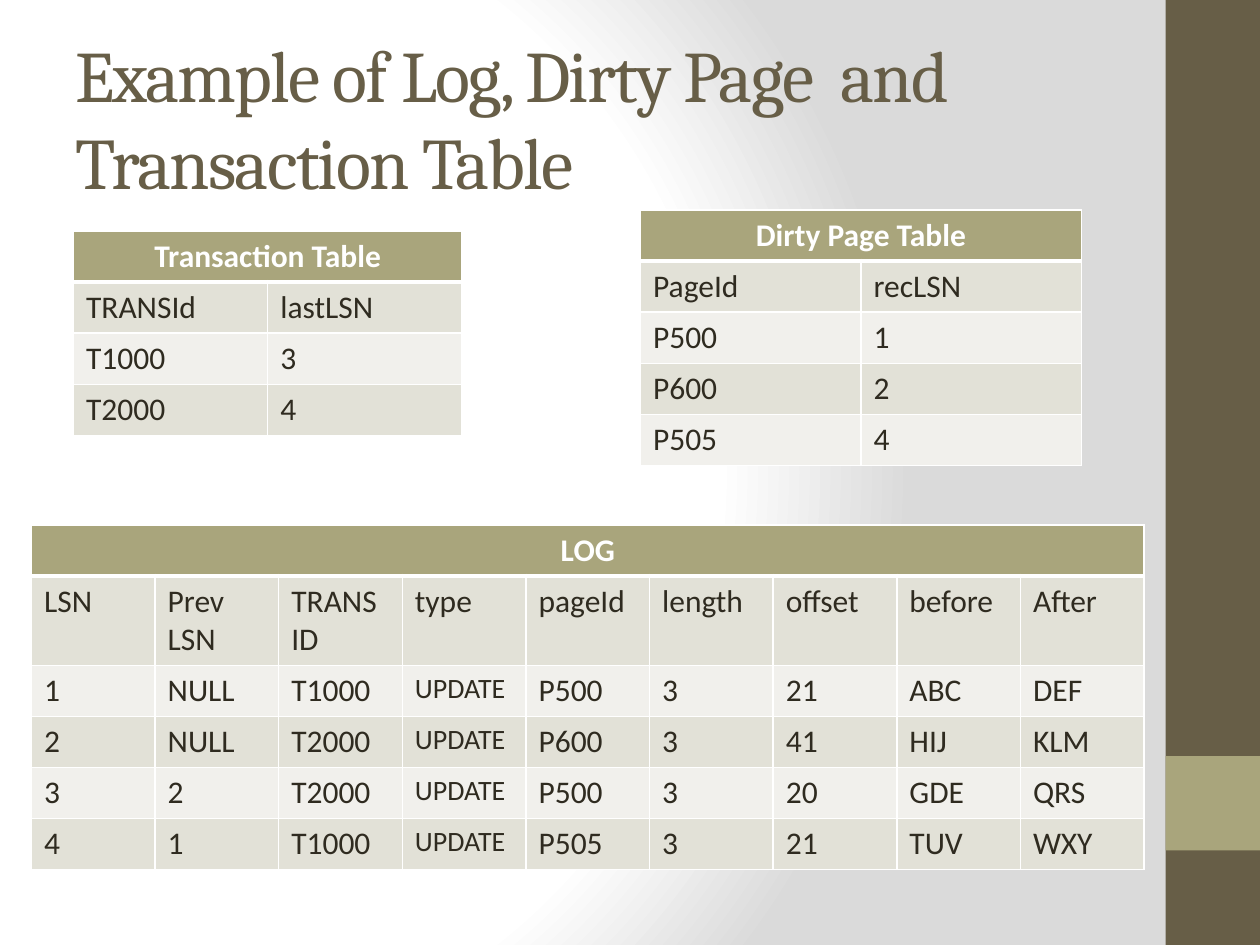
from lxml import etree
from pptx import Presentation
from pptx.dml.color import RGBColor
from pptx.enum.shapes import MSO_SHAPE
from pptx.enum.text import MSO_ANCHOR, PP_ALIGN
from pptx.oxml import parse_xml
from pptx.oxml.ns import nsdecls, qn
from pptx.util import Pt

RECTANGLE = MSO_SHAPE.RECTANGLE
MIDDLE = MSO_ANCHOR.MIDDLE
CENTER = PP_ALIGN.CENTER

COLORS = {
    "brown": "675E47",
    "olive": "A9A57C",
    "text": "2F2B20",
    "white": "FFFFFF",
    "dark_band": "E2E1D7",
    "light_band": "F1F0EC",
    "gray": "DADADA",
}
ROW_HEIGHT = 29.2
TALL_ROW_HEIGHT = 51
SMALL_TEXT = "UPDATE"

TRANSACTION_ROWS = [["TRANSId", "lastLSN"], ["T1000", "3"], ["T2000", "4"]]
DIRTY_PAGE_ROWS = [["PageId", "recLSN"], ["P500", "1"], ["P600", "2"], ["P505", "4"]]
LOG_ROWS = [
    ["LSN", "Prev\nLSN", "TRANS\nID", "type", "pageId", "length", "offset", "before", "After"],
    ["1", "NULL", "T1000", "UPDATE", "P500", "3", "21", "ABC", "DEF"],
    ["2", "NULL", "T2000", "UPDATE", "P600", "3", "41", "HIJ", "KLM"],
    ["3", "2", "T2000", "UPDATE", "P500", "3", "20", "GDE", "QRS"],
    ["4", "1", "T1000", "UPDATE", "P505", "3", "21", "TUV", "WXY"],
]


def color(name):
    return RGBColor.from_string(COLORS[name])


def add_run(paragraph, text, font_name, size, color_name, bold=False):
    run = paragraph.add_run()
    run.text = text
    run.font.name = font_name
    run.font.size = Pt(size)
    run.font.bold = bold
    run.font.color.rgb = color(color_name)
    return run


def set_background(slide):
    slide.background.fill.gradient()
    old_gradient = next(slide.background._cSld.iter(qn("a:gradFill")))
    stops = "".join(
        f'<a:gs pos="{position * 1000}"><a:srgbClr val="{COLORS[name]}"/></a:gs>'
        for position, name in [(0, "white"), (75, "white"), (100, "gray")]
    )
    gradient = parse_xml(
        f'<a:gradFill {nsdecls("a")} rotWithShape="1"><a:gsLst>{stops}</a:gsLst>'
        '<a:path path="circle">'
        '<a:fillToRect l="20000" t="50000" r="100000" b="50000"/>'
        "</a:path></a:gradFill>"
    )
    old_gradient.getparent().replace(old_gradient, gradient)


def add_block(slide, left, top, width, height, color_name):
    shape = slide.shapes.add_shape(RECTANGLE, Pt(left), Pt(top), Pt(width), Pt(height))
    shape.shadow.inherit = False
    shape.fill.solid()
    shape.fill.fore_color.rgb = color(color_name)
    shape.line.fill.background()


def add_sidebar(slide, left, top, width, height):
    add_block(slide, left, top, width, height, "brown")
    add_block(slide, left, top + height * 0.8, width, width, "olive")


def add_title(slide, left, top, width, height, text):
    text_box = slide.shapes.add_textbox(Pt(left), Pt(top), Pt(width), Pt(height))
    text_frame = text_box.text_frame
    text_frame.word_wrap = True
    text_frame.vertical_anchor = MIDDLE
    run = add_run(text_frame.paragraphs[0], text, "Cambria", 41.4, "brown")
    run.font._element.set("spc", "-100")


def set_borders(cell, row_index):
    properties = cell._tc.get_or_add_tcPr()
    widths = {
        "lnL": 1,
        "lnR": 1,
        "lnT": 3 if row_index == 1 else 1,
        "lnB": 3 if row_index == 0 else 1,
    }
    for tag, width in widths.items():
        line = etree.SubElement(properties, qn(f"a:{tag}"), w=str(Pt(width)))
        fill = etree.SubElement(line, qn("a:solidFill"))
        etree.SubElement(fill, qn("a:srgbClr"), val=COLORS["white"])


def format_cell(cell, row_index):
    set_borders(cell, row_index)
    band = "dark_band" if row_index % 2 else "light_band"
    cell.fill.solid()
    cell.fill.fore_color.rgb = color("olive" if row_index == 0 else band)


def write_cell(cell, text):
    text_frame = cell.text_frame
    for index, line in enumerate(text.split("\n")):
        paragraph = text_frame.add_paragraph() if index else text_frame.paragraphs[0]
        add_run(paragraph, line, "Calibri", 16 if line == SMALL_TEXT else 18, "text")


def add_titled_table(slide, left, top, width, title, rows):
    heights = [ROW_HEIGHT] + [
        TALL_ROW_HEIGHT if any("\n" in text for text in row) else ROW_HEIGHT
        for row in rows
    ]
    column_count = len(rows[0])
    table = slide.shapes.add_table(
        len(heights), column_count, Pt(left), Pt(top), Pt(width), Pt(sum(heights))
    ).table
    for column in table.columns:
        column.width = Pt(width / column_count)
    for row_index, height in enumerate(heights):
        table.rows[row_index].height = Pt(height)
        for cell in table.rows[row_index].cells:
            format_cell(cell, row_index)

    header = table.cell(0, 0)
    header.merge(table.cell(0, column_count - 1))
    paragraph = header.text_frame.paragraphs[0]
    paragraph.alignment = CENTER
    add_run(paragraph, title, "Calibri", 18, "white", bold=True)
    for row_index, row in enumerate(rows, start=1):
        for column_index, text in enumerate(row):
            write_cell(table.cell(row_index, column_index), text)


def main():
    presentation = Presentation()
    presentation.slide_width = Pt(720)
    presentation.slide_height = Pt(540)
    slide = presentation.slides.add_slide(presentation.slide_layouts[6])
    set_background(slide)
    add_sidebar(slide, 666, 0, 54, 540)
    add_title(slide, 36, 21.6, 600, 90, "Example of Log, Dirty Page  and Transaction Table")
    add_titled_table(slide, 18, 300, 636, "LOG", LOG_ROWS)
    add_titled_table(slide, 366, 120, 252, "Dirty Page Table", DIRTY_PAGE_ROWS)
    add_titled_table(slide, 42, 132, 222, "Transaction Table", TRANSACTION_ROWS)
    presentation.save("out.pptx")


if __name__ == "__main__":
    main()
